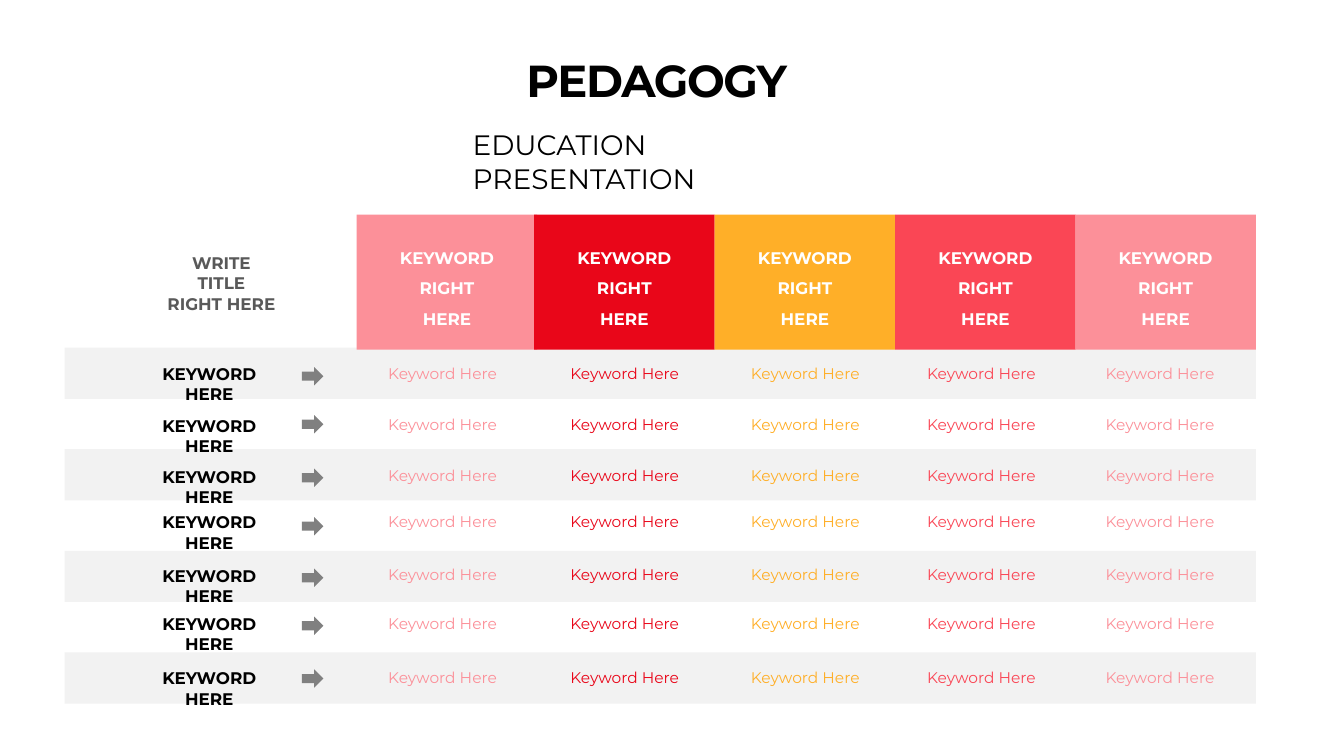
from pptx import Presentation
from pptx.dml.color import RGBColor
from pptx.enum.shapes import MSO_SHAPE as Shape
from pptx.enum.text import MSO_ANCHOR as Anchor, MSO_AUTO_SIZE as AutoSize, PP_ALIGN as Align
from pptx.util import Cm, Pt

FONT = "Montserrat"
COLORS = {
    "black": "000000", "white": "FFFFFF", "dark": "595959", "arrow": "808080",
    "band": "F2F2F2", "pink": "FC9099", "red": "E90619", "amber": "FFAF28",
    "coral": "FA4655",
}
TITLE = ["PEDAGOGY"]
SUBTITLE = ["EDUCATION PRESENTATION"]
CORNER = ["WRITE TITLE", "RIGHT HERE"]
COLUMNS = [
    {"header": ["KEYWORD", "RIGHT HERE"], "color": "pink", "left": 8.99, "cell_left": 9.53},
    {"header": ["KEYWORD", "RIGHT HERE"], "color": "red", "left": 13.46, "cell_left": 14.12},
    {"header": ["KEYWORD", "RIGHT HERE"], "color": "amber", "left": 18.01, "cell_left": 18.67},
    {"header": ["KEYWORD", "RIGHT HERE"], "color": "coral", "left": 22.56, "cell_left": 23.11},
    {"header": ["KEYWORD", "RIGHT HERE"], "color": "pink", "left": 27.1, "cell_left": 27.61},
]
ROW_LABEL = ["KEYWORD HERE"]
CELL = ["Keyword Here"]
ROWS = [
    {"text_top": 9.04, "arrow_top": 9.25},
    {"text_top": 10.34, "arrow_top": 10.46},
    {"text_top": 11.63, "arrow_top": 11.81},
    {"text_top": 12.78, "arrow_top": 13.03},
    {"text_top": 14.12, "arrow_top": 14.33},
    {"text_top": 15.34, "arrow_top": 15.54},
    {"text_top": 16.71, "arrow_top": 16.87},
]
BAND_LEFT, BAND_TOP, BAND_WIDTH, BAND_HEIGHT, ROW_PITCH = 1.63, 8.76, 30.02, 1.29, 1.28
HEADER_TOP, HEADER_WIDTH, HEADER_HEIGHT = 5.41, 4.55, 3.4
LABEL_WIDTH = 3.2

deck = Presentation()
deck.slide_width, deck.slide_height = Cm(33.87), Cm(19.05)
page = deck.slides.add_slide(deck.slide_layouts[5])


def write(lines, left, top, width, height, size, color, bold=False, align=Align.CENTER,
          spacing=None, wrap=True, anchor=Anchor.TOP, tracking=None, box=None):
    area = [Cm(value) for value in (left, top, width, height)]
    box = box or page.shapes.add_textbox(*area)
    box.left, box.top, box.width, box.height = area
    frame = box.text_frame
    frame.word_wrap = wrap
    frame.auto_size = AutoSize.NONE
    frame.vertical_anchor = anchor
    for index, line in enumerate(lines):
        para = frame.add_paragraph() if index else frame.paragraphs[0]
        para.alignment = align
        if spacing:
            para.line_spacing = spacing
        span = para.add_run()
        span.text = line
        span.font.name = FONT
        span.font.size = Pt(size)
        span.font.bold = bold
        span.font.color.rgb = RGBColor.from_string(COLORS[color])
        if tracking:
            span._r.get_or_add_rPr().set("spc", str(tracking))


def draw(kind, left, top, width, height, color):
    shape = page.shapes.add_shape(kind, Cm(left), Cm(top), Cm(width), Cm(height))
    shape.shadow.inherit = False
    shape.fill.solid()
    shape.fill.fore_color.rgb = RGBColor.from_string(COLORS[color])
    shape.line.fill.background()


write(TITLE, 11.71, 1.19, 9.68, 1.63, 32, "black", bold=True, anchor=Anchor.MIDDLE,
      tracking=-100, box=page.shapes.title)
write(SUBTITLE, 11.66, 3.1, 10.54, 1.12, 20, "black", align=Align.LEFT)

for index in range(0, len(ROWS), 2):
    draw(Shape.RECTANGLE, BAND_LEFT, BAND_TOP + index * ROW_PITCH, BAND_WIDTH, BAND_HEIGHT, "band")

write(CORNER, 3.94, 6.25, 3.28, 1.27, 12, "dark", bold=True)

for column in COLUMNS:
    draw(Shape.RECTANGLE, column["left"], HEADER_TOP, HEADER_WIDTH, HEADER_HEIGHT, column["color"])
for column in COLUMNS:
    write(column["header"], column["left"] + (HEADER_WIDTH - LABEL_WIDTH) / 2, 5.87,
          LABEL_WIDTH, 1.7, 12, "white", bold=True, spacing=1.5)

for row in ROWS:
    write(ROW_LABEL, 3.18, row["text_top"], 4.19, 0.76, 12, "black", bold=True)
    draw(Shape.RIGHT_ARROW, 7.61, row["arrow_top"], 0.54, 0.46, "arrow")
    for column in COLUMNS:
        write(CELL, column["cell_left"], row["text_top"], 3.25, 0.74, 11, column["color"], wrap=False)

deck.save("out.pptx")
